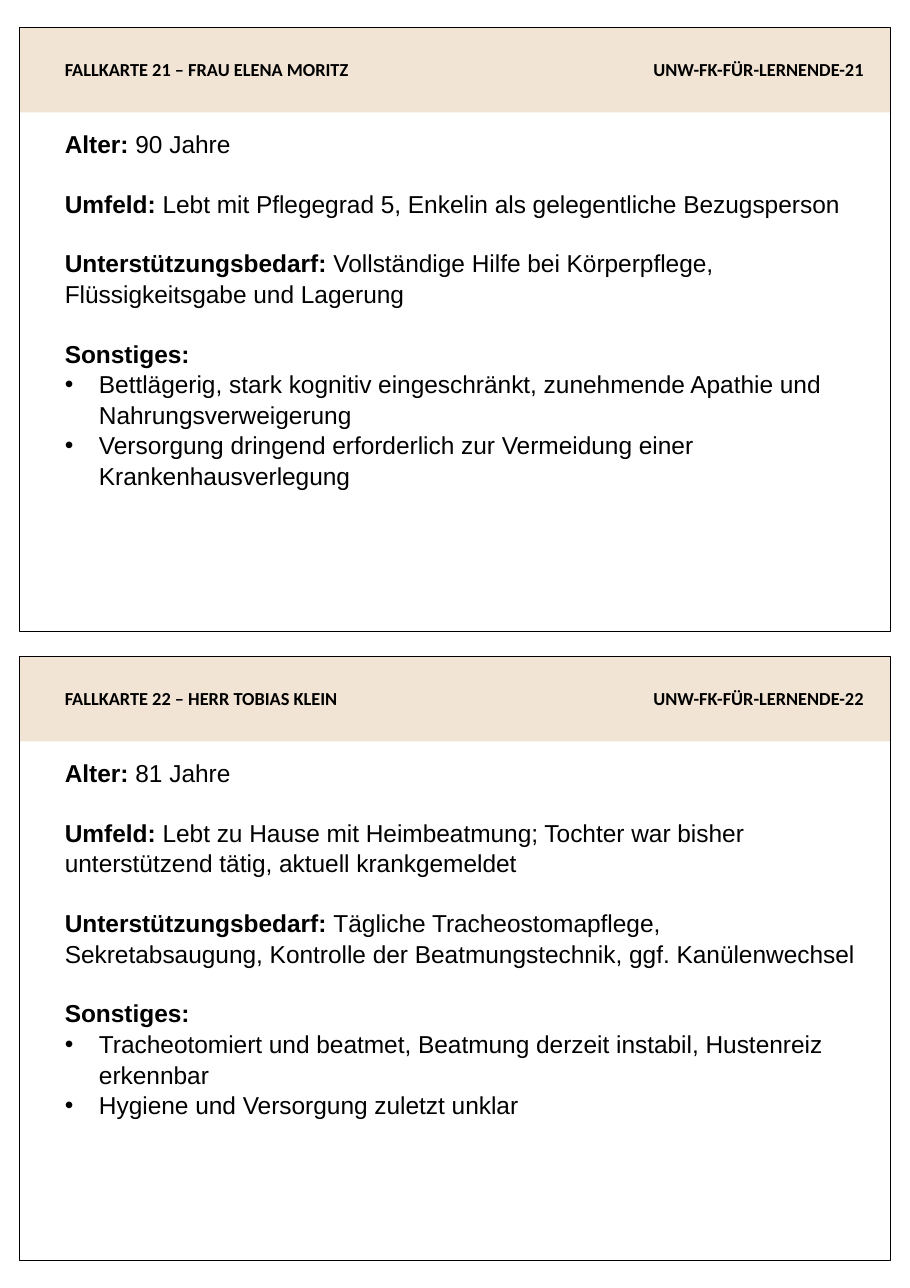
from lxml import etree
from pptx import Presentation
from pptx.dml.color import RGBColor
from pptx.enum import shapes, text
from pptx.oxml import ns
from pptx.util import Inches, Pt

BLACK = RGBColor(0x00, 0x00, 0x00)
SAND = RGBColor(0xF2, 0xE4, 0xD4)

CARD_LEFT, CARD_WIDTH, CARD_HEIGHT = 0.18, 7.9, 5.48
FIRST_TOP, CARD_PITCH = 0.25, 5.71
BAND_HEIGHT = 0.77
TEXT_LEFT, TEXT_WIDTH = 0.49, 7.45
LINE_SPACING = 1.04
BLOCK_GAP = Pt(19.15)
BULLET_INDENT = Inches(0.31)

CARDS = [
    {
        "number": 21,
        "name": "FRAU ELENA MORITZ",
        "facts": [
            ("Alter: ", "90 Jahre"),
            ("Umfeld: ", "Lebt mit Pflegegrad 5, Enkelin als gelegentliche Bezugsperson"),
            ("Unterstützungsbedarf: ",
             "Vollständige Hilfe bei Körperpflege, Flüssigkeitsgabe und Lagerung"),
        ],
        "notes": [
            "Bettlägerig, stark kognitiv eingeschränkt, zunehmende Apathie und "
            "Nahrungsverweigerung",
            "Versorgung dringend erforderlich zur Vermeidung einer Krankenhausverlegung",
        ],
    },
    {
        "number": 22,
        "name": "HERR TOBIAS KLEIN",
        "facts": [
            ("Alter: ", "81 Jahre"),
            ("Umfeld: ", "Lebt zu Hause mit Heimbeatmung; Tochter war bisher "
                         "unterstützend tätig, aktuell krankgemeldet"),
            ("Unterstützungsbedarf: ",
             "Tägliche Tracheostomapflege, Sekretabsaugung, Kontrolle der "
             "Beatmungstechnik, ggf. Kanülenwechsel"),
        ],
        "notes": [
            "Tracheotomiert und beatmet, Beatmung derzeit instabil, Hustenreiz erkennbar",
            "Hygiene und Versorgung zuletzt unklar",
        ],
    },
]


def add_rectangle(slide, top, height, fill=None, line=None):
    shape = slide.shapes.add_shape(
        shapes.MSO_SHAPE.RECTANGLE, Inches(CARD_LEFT), Inches(top),
        Inches(CARD_WIDTH), Inches(height))
    shape.shadow.inherit = False
    if fill is None:
        shape.fill.background()
    else:
        shape.fill.solid()
        shape.fill.fore_color.rgb = fill
    if line is None:
        shape.line.fill.background()
    else:
        shape.line.color.rgb = line
        shape.line.width = Pt(0.75)


def add_text_frame(slide, left, top, width, height):
    box = slide.shapes.add_textbox(
        Inches(left), Inches(top), Inches(width), Inches(height))
    box.text_frame.word_wrap = True
    return box.text_frame


def style_font(font, name, size, bold):
    font.name = name
    font.size = Pt(size)
    font.bold = bold
    font.color.rgb = BLACK


def add_heading(slide, left, top, width, heading, alignment):
    text_frame = add_text_frame(slide, left, top, width, 0.3)
    text_frame.text = heading
    paragraph = text_frame.paragraphs[0]
    paragraph.alignment = alignment
    style_font(paragraph.runs[0].font, "Calibri", 12, True)


def add_bullet(paragraph):
    properties = paragraph._p.get_or_add_pPr()
    properties.set("marL", str(BULLET_INDENT))
    properties.set("indent", str(-BULLET_INDENT))
    bullet_font = etree.SubElement(properties, ns.qn("a:buFont"))
    bullet_font.set("typeface", "Arial")
    bullet = etree.SubElement(properties, ns.qn("a:buChar"))
    bullet.set("char", "•")


def write_paragraph(paragraph, label="", content=""):
    paragraph.line_spacing = LINE_SPACING
    for words, bold in ((label, True), (content, False)):
        if words:
            run = paragraph.add_run()
            run.text = words
            style_font(run.font, "Arial", 16, bold)


def add_body(slide, top, facts, notes):
    text_frame = add_text_frame(slide, TEXT_LEFT, top, TEXT_WIDTH, 3.6)
    for index, (label, content) in enumerate(facts + [("Sonstiges:", "")]):
        if index == 0:
            paragraph = text_frame.paragraphs[0]
        else:
            paragraph = text_frame.add_paragraph()
            paragraph.space_before = BLOCK_GAP
        write_paragraph(paragraph, label, content)
    for note in notes:
        paragraph = text_frame.add_paragraph()
        add_bullet(paragraph)
        write_paragraph(paragraph, content=note)


def add_card(slide, top, card):
    add_rectangle(slide, top, BAND_HEIGHT, fill=SAND)
    add_rectangle(slide, top, CARD_HEIGHT, line=BLACK)
    heading_top = top + 0.23
    add_heading(slide, TEXT_LEFT, heading_top, 4.14,
                f"FALLKARTE {card['number']} – {card['name']}", text.PP_ALIGN.LEFT)
    add_heading(slide, 4.63, heading_top, 3.31,
                f"UNW-FK-FÜR-LERNENDE-{card['number']}", text.PP_ALIGN.RIGHT)
    add_body(slide, top + 0.86, card["facts"], card["notes"])


def main():
    presentation = Presentation()
    presentation.slide_width = Inches(8.26)
    presentation.slide_height = Inches(11.69)
    slide = presentation.slides.add_slide(presentation.slide_layouts[6])
    for index, card in enumerate(CARDS):
        add_card(slide, FIRST_TOP + index * CARD_PITCH, card)
    presentation.save("out.pptx")


if __name__ == "__main__":
    main()
